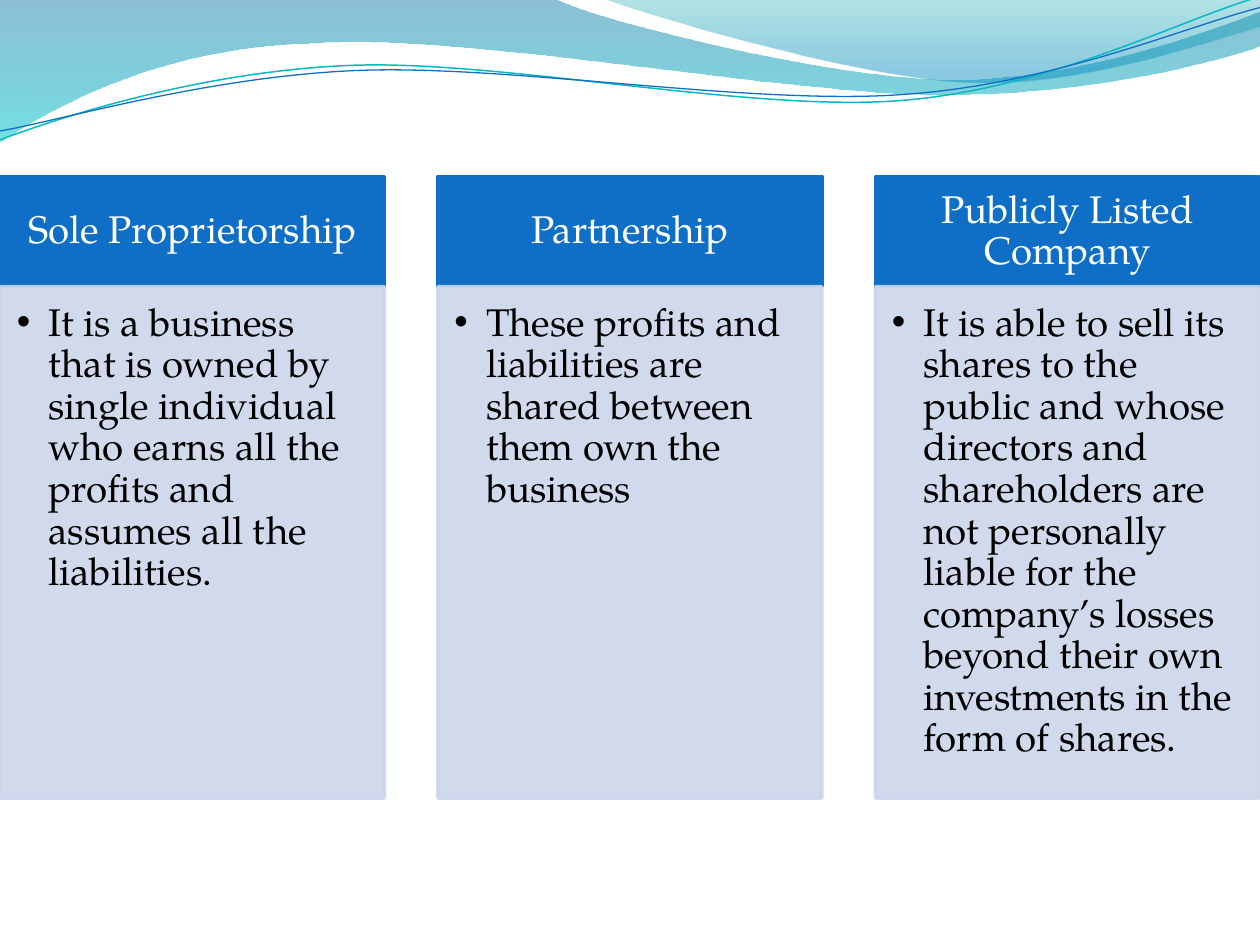
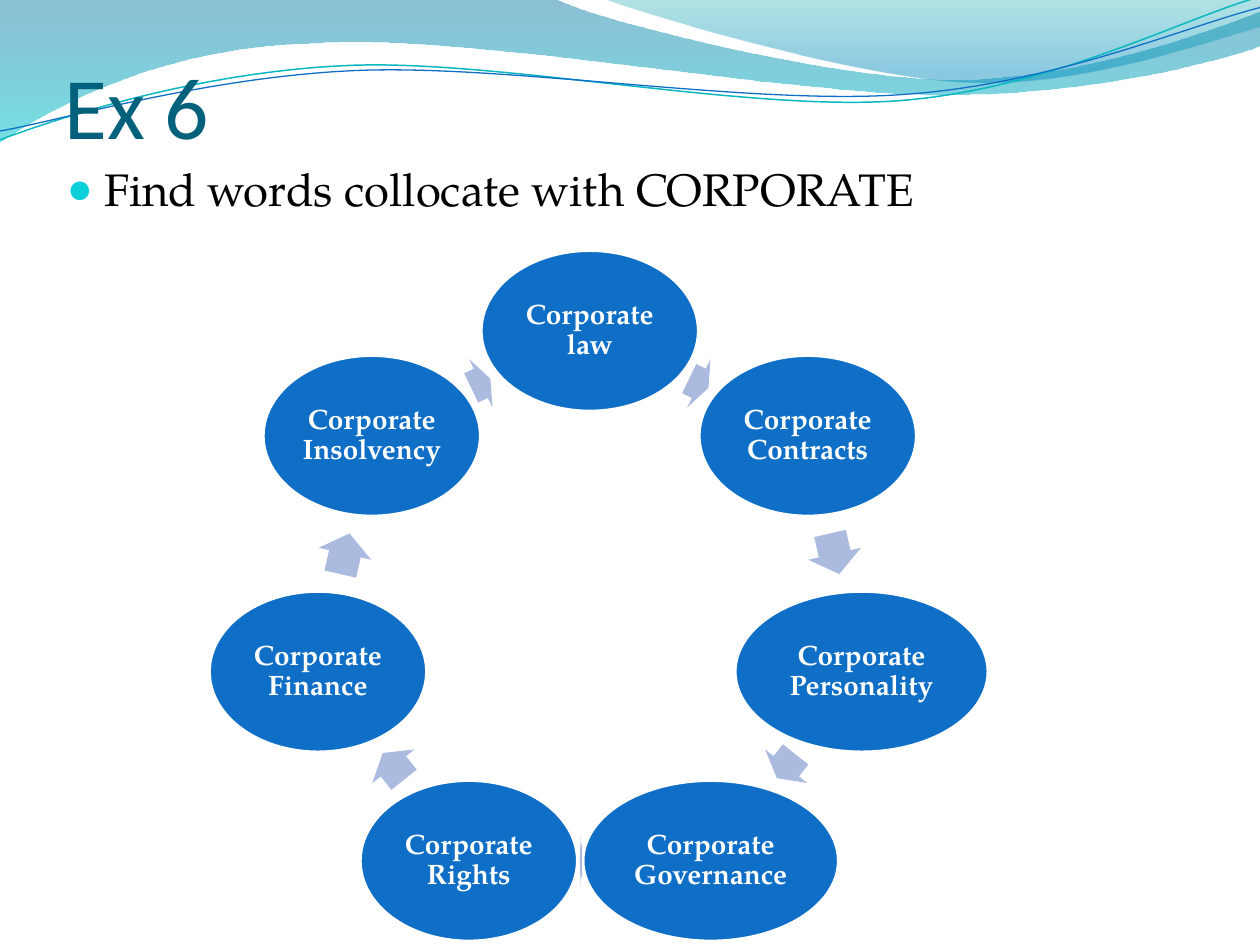
"""Build two slides on business forms and corporate collocations."""
from math import cos, pi, sin

from lxml.etree import SubElement
from pptx import Presentation
from pptx.dml.color import RGBColor
from pptx.enum.shapes import MSO_SHAPE
from pptx.enum.text import MSO_ANCHOR, MSO_AUTO_SIZE, PP_ALIGN
from pptx.oxml.ns import qn
from pptx.util import Cm, Pt

HUES = {
    "blue": "0F6FC6", "teal": "0AB8BF", "pale": "CCD5EA", "arrow": "ABBBDF",
    "title": "04617B", "dot": "0BD0D9", "white": "FFFFFF", "black": "000000",
    "deep": "0074A1", "aqua": "00C6CF", "sea": "00A1A9", "sky": "008BBF",
}
SERIF, SANS = "TeX Gyre Pagella", "Calibri"
INCH = 2.54


def draw(slide, kind, box, fill, line=None):
    """Add a preset shape with a flat fill and an optional 2 pt outline."""
    shape = slide.shapes.add_shape(kind, *[Cm(v) for v in box])
    shape.shadow.inherit = False
    shape.fill.solid()
    shape.fill.fore_color.rgb = RGBColor.from_string(HUES[fill])
    if line:
        shape.line.color.rgb = RGBColor.from_string(HUES[line])
        shape.line.width = Pt(2)
    else:
        shape.line.fill.background()
    return shape


def write(shape, text, size, hue, pads, anchor, font=SERIF, bold=False,
          space=0.9, align=PP_ALIGN.CENTER, dent=0, mark=None, tint=None):
    """Fill a shape with one formatted, optionally bulleted paragraph."""
    frame = shape.text_frame
    frame.text = text
    frame.word_wrap = True
    frame.auto_size = MSO_AUTO_SIZE.NONE
    frame.vertical_anchor = anchor
    (frame.margin_left, frame.margin_top,
     frame.margin_right, frame.margin_bottom) = [Cm(v) for v in pads]
    para = frame.paragraphs[0]
    para.alignment = align
    para.line_spacing = space
    face = para.runs[0].font
    face.name, face.size, face.bold = font, Pt(size), bold
    face.color.rgb = RGBColor.from_string(HUES[hue])
    if mark:
        props = para._p.get_or_add_pPr()
        props.set("marL", str(Cm(dent)))
        props.set("indent", str(-Cm(dent)))
        if tint:
            SubElement(SubElement(props, qn("a:buClr")), qn("a:srgbClr"), val=HUES[tint])
            SubElement(props, qn("a:buSzPct"), val="95000")
        SubElement(props, qn("a:buFont"), typeface="Arial")
        SubElement(props, qn("a:buChar"), char=mark)


deck = Presentation()
deck.slide_width, deck.slide_height = Cm(25.4), Cm(19.05)
forms = deck.slides.add_slide(deck.slide_layouts[6])
words = deck.slides.add_slide(deck.slide_layouts[1])

waves = [
    ([(0, 0), (4.4, -0.01), (4.76, 0.17, 6.64, 0.63, 7.58, 0.63),
      (8.53, 0.63, 9.58, 0.26, 10, 0.09), (10.01, 0.36),
      (9.83, 0.44, 8.7, 0.76, 7.46, 0.75), (6.22, 0.75, 3.82, 0.28, 2.57, 0.34),
      (1.29, 0.36, 0.46, 0.83, -0.01, 1.13), (0, 0)],
     [(0, "deep", 45), (1, "aqua", 55)], None),
    ([(4.79, -0.01), (5.09, 0.11, 6.82, 0.62, 7.69, 0.65),
      (8.56, 0.69, 9.61, 0.32, 10, 0.21), (10, 0), (4.79, -0.01)],
     [(0, "sea", 30), (0.8, "sky", 45)], None),
    ([(0, 1.11), (0.48, 0.93, 1.58, 0.57, 2.77, 0.52),
      (3.95, 0.47, 5.93, 0.89, 7.13, 0.8), (8.33, 0.71, 9.38, 0.15, 9.98, -0.02)],
     None, ("teal", 0.85)),
    ([(0, 1.04), (0.47, 0.96, 1.64, 0.61, 2.83, 0.56),
      (4.03, 0.51, 5.97, 0.84, 7.17, 0.75), (8.36, 0.67, 9.41, 0.21, 10, 0.06)],
     None, ("blue", 0.75)),
]
tree = deck.slide_master.shapes.element
for rank, (parts, stops, line) in enumerate(waves):
    dots = [(Cm(part[i] * INCH), Cm(part[i + 1] * INCH))
            for part in parts for i in range(0, len(part), 2)]
    pen = forms.shapes.build_freeform(*dots[0])
    pen.add_line_segments(dots[1:], close=bool(stops))
    wave = pen.convert_to_shape()
    wave.shadow.inherit = False
    wave.name = f"Wave {rank + 1}"
    trace = wave.element.xpath(".//a:path")[0]
    legs = iter(trace.xpath("a:lnTo"))
    for part in parts[1:]:
        leg = next(legs)
        if len(part) == 6:
            curve = SubElement(trace, qn("a:cubicBezTo"))
            leg.addprevious(curve)
            for step in (leg, next(legs), next(legs)):
                curve.append(step[0])
                trace.remove(step)
    if stops:
        wave.line.fill.background()
        wave.fill.gradient()
        wave.fill.gradient_angle = 270
        for stop, (place, hue, _) in zip(wave.fill.gradient_stops, stops):
            stop.position = place
            stop.color.rgb = RGBColor.from_string(HUES[hue])
        for tone, (_, _, alpha) in zip(wave.element.xpath(".//a:gs/a:srgbClr"), stops):
            SubElement(tone, qn("a:alpha"), val=str(alpha * 1000))
    else:
        wave.fill.background()
        wave.line.color.rgb = RGBColor.from_string(HUES[line[0]])
        wave.line.width = Pt(line[1])
    wave.element.nvSpPr.cNvPr.id = 20 + rank
    tree.insert(2 + rank, wave.element)

cards = [
    ("Sole Proprietorship", "It is a business that is owned by single individual "
     "who earns all the profits and assumes all the liabilities."),
    ("Partnership", "These profits and liabilities are shared between them own the business"),
    ("Publicly Listed Company", "It is able to sell its shares to the public and whose "
     "directors and shareholders are not personally liable for the company’s losses "
     "beyond their own investments in the form of shares."),
]
for rank, (head, note) in enumerate(cards):
    left = 0.01 + rank * 8.82
    top = draw(forms, MSO_SHAPE.RECTANGLE, (left, 3.56, 7.74, 2.21), "blue", "blue")
    write(top, head, 22, "white", (0.43, 0.25, 0.43, 0.25), MSO_ANCHOR.MIDDLE)
    card = draw(forms, MSO_SHAPE.RECTANGLE, (left, 5.78, 7.74, 10.31), "pale", "pale")
    for tone in card.element.spPr.xpath(".//a:srgbClr"):
        SubElement(tone, qn("a:alpha"), val="90000")
    write(card, note, 22, "black", (0.33, 0.33, 0.43, 0.48), MSO_ANCHOR.TOP,
          align=PP_ALIGN.LEFT, dent=0.64, mark="•")

title, body = words.shapes.title, words.placeholders[1]
title.left, title.top, title.width, title.height = Cm(1.3), Cm(0), Cm(22.86), Cm(3.17)
write(title, "Ex 6", 50, "title", (0, 0.13, 0, 0), MSO_ANCHOR.BOTTOM,
      font=SANS, space=1.0, align=PP_ALIGN.LEFT)
body.left, body.top, body.width, body.height = Cm(1.1), Cm(3.12), Cm(22.86), Cm(12.19)
write(body, "Find words collocate with CORPORATE", 26, "black",
      (0.25, 0.13, 0.25, 0.13), MSO_ANCHOR.TOP, space=1.0,
      align=PP_ALIGN.LEFT, dent=0.76, mark="●", tint="dot")

nodes = [
    ("law", 4.39, 0.43, 0), ("Contracts", 4.39, 0.84, 0),
    ("Personality", 5.11, 0.61, 0), ("Governance", 5.16, 0.05, -0.18),
    ("Rights", 4.39, 0.69, 0), ("Finance", 4.39, 0.84, 0),
    ("Insolvency", 4.39, 0.43, 0),
]
midx, midy, reach = 11.89, 12.29, 5.62
turn = 2 * pi / len(nodes)
inner = reach * cos(turn / 2)
tall, high = 3.25, 1.09
for rank, (word, wide, thick, shift) in enumerate(nodes):
    angle = rank * turn
    oval = draw(words, MSO_SHAPE.OVAL,
                (midx + reach * sin(angle) - wide / 2,
                 midy - reach * cos(angle) - tall / 2, wide, tall), "blue", "white")
    write(oval, f"Corporate {word}", 16, "white", [0.05] * 4, MSO_ANCHOR.MIDDLE, bold=True)
    angle += turn / 2
    arrow = draw(words, MSO_SHAPE.RIGHT_ARROW,
                 (midx + inner * sin(angle) + shift - thick / 2,
                  midy - inner * cos(angle) - high / 2, thick, high), "arrow")
    arrow.adjustments[0], arrow.adjustments[1] = 0.6, 0.5
    arrow.rotation = (rank + 0.5) * 360 / len(nodes)

deck.save("out.pptx")
